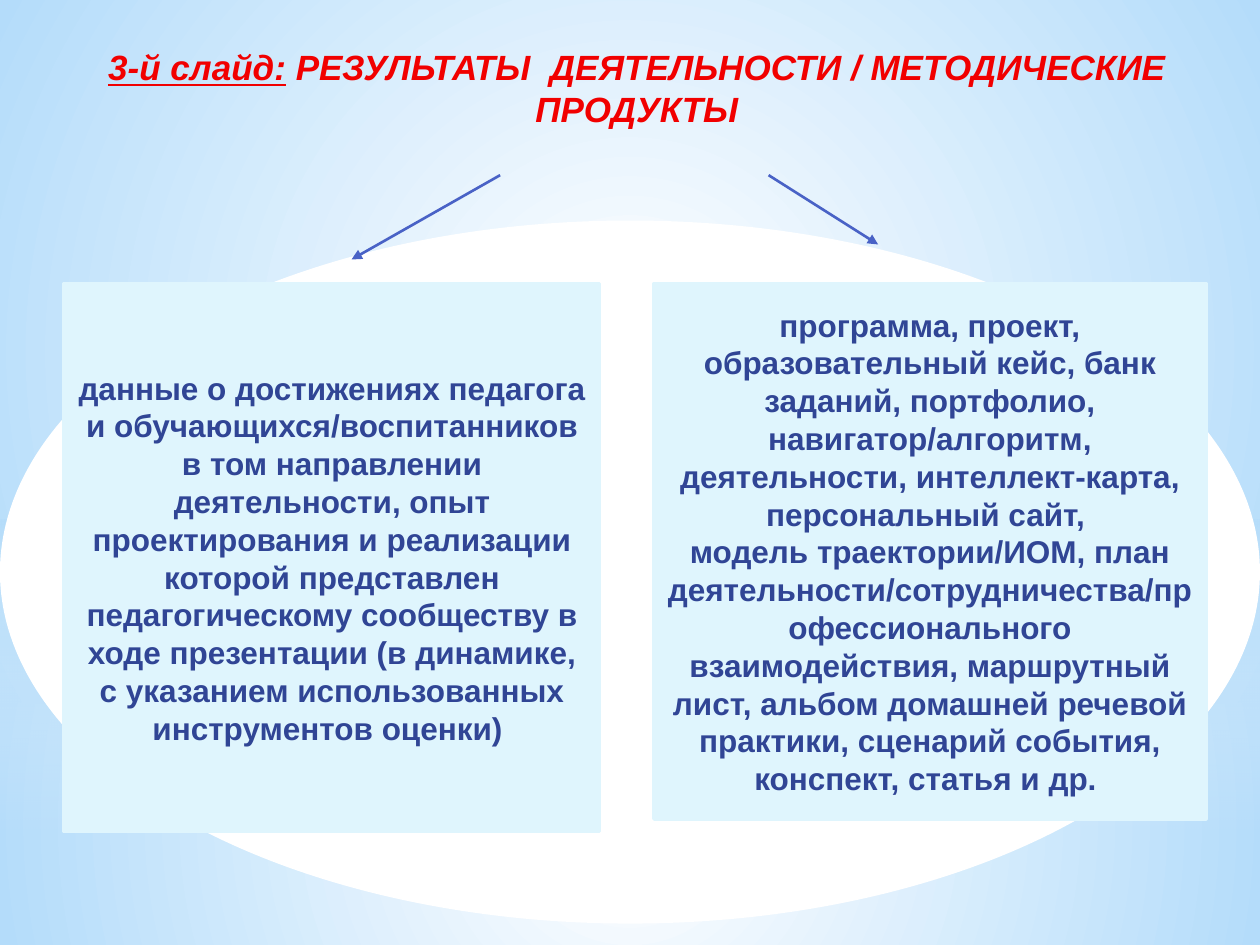
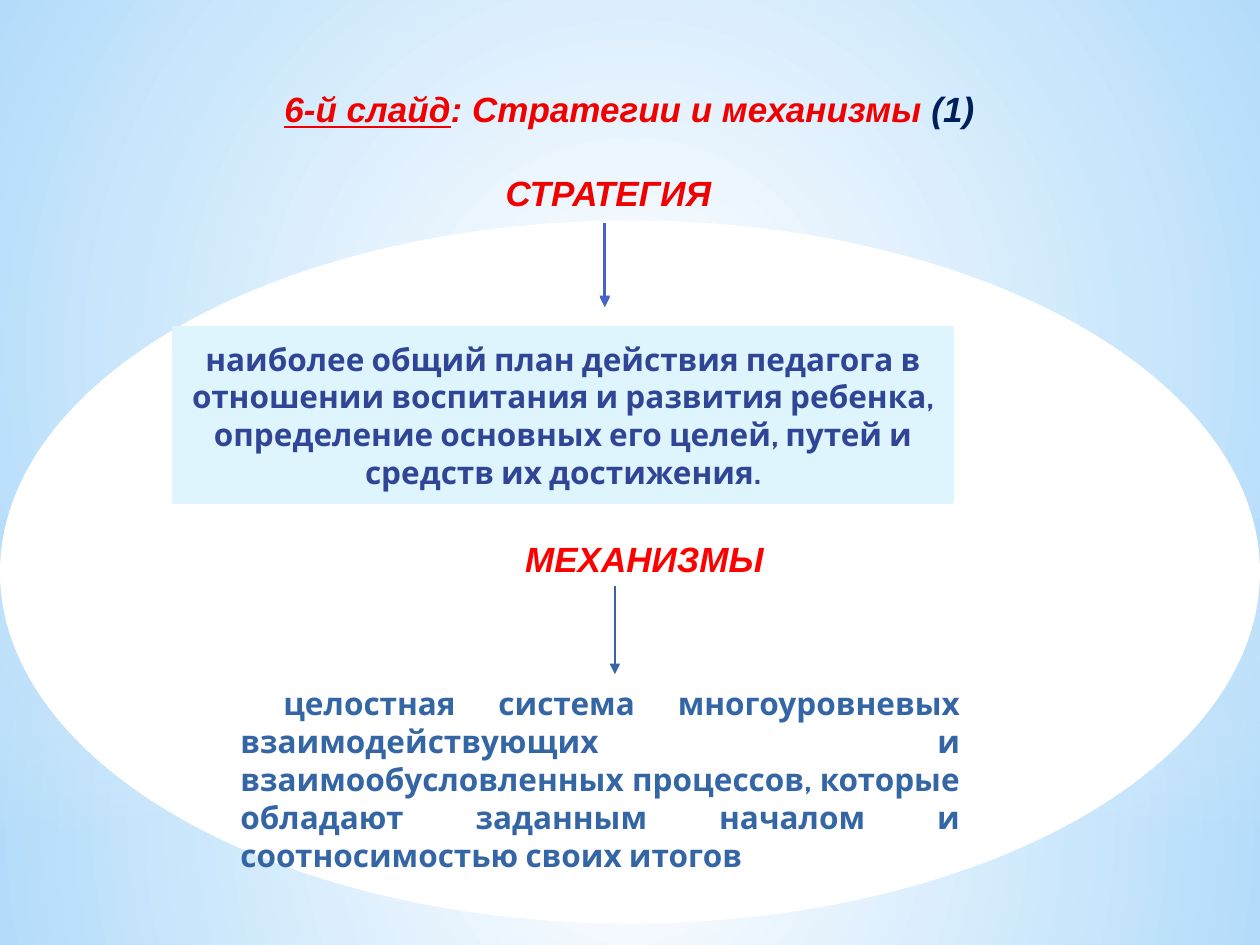
from lxml.etree import SubElement
from pptx import Presentation
from pptx.dml.color import RGBColor as RGB
from pptx.enum.shapes import MSO_CONNECTOR as CONN, MSO_SHAPE as SHAPE
from pptx.enum.text import MSO_ANCHOR as ANCHOR, MSO_AUTO_SIZE as AUTO, PP_ALIGN as ALIGN
from pptx.oxml.ns import qn
from pptx.util import Pt

W, H = 720, 540
COLORS = {
    "sky": "9CD4FF", "haze": "B4DCFA", "white": "FFFFFF", "card": "DFF5FD",
    "title": "F10000", "red": "FF0000", "number": "001E5A", "text": "304595",
    "arrow": "4962C6", "steel": "3465A4",
}
HEADING = {"name": "Arial", "size": 20, "bold": True, "italic": True, "color": "title"}
CARD_TEXT = {"name": "Arial", "size": 18, "bold": True, "color": "text"}
CABIN_TEXT = CARD_TEXT | {"name": "Cabin"}


def rgb(name):
    return RGB.from_string(COLORS[name])


def place(sp, x, y, w, h):
    sp.left, sp.top, sp.width, sp.height = Pt(x), Pt(y), Pt(w), Pt(h)


def write(sp, paragraphs, anchor=ANCHOR.MIDDLE, align=ALIGN.CENTER, before=0, after=0):
    """Fill sp with paragraphs, each a list of (text, format) runs."""
    tf = sp.text_frame
    tf.word_wrap, tf.auto_size, tf.vertical_anchor = True, AUTO.NONE, anchor
    for i, runs in enumerate(paragraphs):
        p = tf.add_paragraph() if i else tf.paragraphs[0]
        p.alignment, p.space_before, p.space_after = align, Pt(before), Pt(after)
        for text, fmt in runs:
            r = p.add_run()
            r.text = text
            for key, value in fmt.items():
                if key == "color":
                    r.font.color.rgb = rgb(value)
                else:
                    setattr(r.font, key, Pt(value) if key == "size" else value)


def add_shape(s, kind, box, fill=None, line=None):
    sp = s.shapes.add_shape(kind, *map(Pt, box))
    sp.shadow.inherit = False
    if fill:
        sp.fill.solid()
        sp.fill.fore_color.rgb = rgb(fill)
    if line:
        sp.line.color.rgb, sp.line.width = rgb(line), Pt(2)
    else:
        sp.line.fill.background()
    return sp


def add_gradient(sp, stops, radial=True):
    """Give sp a two-stop gradient of (colour, opacity in percent)."""
    props = sp.element.spPr
    grad = SubElement(props, qn("a:gradFill"), rotWithShape="1")
    props.insert(2, grad)
    stop_list = SubElement(grad, qn("a:gsLst"))
    for pos, (color, opacity) in zip((0, 100000), stops):
        stop = SubElement(stop_list, qn("a:gs"), pos=str(pos))
        clr = SubElement(stop, qn("a:srgbClr"), val=COLORS[color])
        if opacity < 100:
            SubElement(clr, qn("a:alpha"), val=str(opacity * 1000))
    if radial:
        path = SubElement(grad, qn("a:path"))
        path.set("path", "circle")
        SubElement(path, qn("a:fillToRect"), {side: "50000" for side in "ltrb"})
    else:
        SubElement(grad, qn("a:lin"), ang="5400000", scaled="0")


def add_arrow(s, x1, y1, x2, y2, color="arrow", width=1.5):
    c = s.shapes.add_connector(CONN.STRAIGHT, Pt(x1), Pt(y1), Pt(x2), Pt(y2))
    c.line.color.rgb, c.line.width = rgb(color), Pt(width)
    SubElement(c.line._get_or_add_ln(), qn("a:tailEnd"), type="triangle")
    SubElement(c.element.spPr, qn("a:effectLst"))


def add_textbox(s, box, paragraphs, **options):
    write(s.shapes.add_textbox(*map(Pt, box)), paragraphs, **options)


def add_card(s, box, paragraphs):
    write(add_shape(s, SHAPE.RECTANGLE, box, "card", "card"), paragraphs)


def add_title(s, box, runs):
    place(s.shapes.title, *box)
    write(s.shapes.title, [runs], anchor=ANCHOR.BOTTOM, before=4, after=3)


def move_backdrop_to_master(prs, s, box):
    """Draw the shared sky and ellipse on s, then move them to the master."""
    x, y, w, h = box
    big = 0.744 * h
    lower = add_shape(s, SHAPE.RECTANGLE, (x, y + big, w, h - big))
    upper = add_shape(s, SHAPE.RECTANGLE, (x, y, w, big))
    band = add_shape(s, SHAPE.RECTANGLE, (x, y + 0.55 * h, w, h / 3))
    ellipse = add_shape(s, SHAPE.OVAL, (x, y + 126, w, big), "white")
    for sp in (lower, upper):
        add_gradient(sp, [("white", 100), ("haze", 100)])
    add_gradient(band, [("haze", 60), ("white", 0)], radial=False)

    master = prs.slide_master
    master.background.fill.solid()
    master.background.fill.fore_color.rgb = rgb("sky")
    for i, sp in enumerate((lower, upper, band, ellipse)):
        sp.element.nvSpPr.cNvPr.set("id", str(101 + i))
        master.shapes.element.insert(2 + i, sp.element)


def results_region(s, box):
    x, y, w, h = box
    # Arrows from the title to the cards
    add_arrow(s, x + 249.1, y, x + 164.2, y + 48.2)
    add_arrow(s, x + 402.5, y, x + 465.1, y + 39.6)
    # Cards
    top, right_w = 61.9, 315.4
    add_card(s, (x, y + top, 306, h - top), [[(
        "данные о достижениях педагога и обучающихся/воспитанников в том направлении "
        "деятельности, опыт проектирования и реализации которой представлен "
        "педагогическому сообществу в ходе презентации (в динамике, с указанием "
        "использованных инструментов оценки) ", CARD_TEXT)]])
    add_card(s, (x + w - right_w, y + top, right_w, h - top - 7.2), [
        [("программа, проект, образовательный кейс, банк заданий, портфолио, "
          "навигатор/алгоритм, деятельности, интеллект-карта, персональный сайт, ",
          CARD_TEXT)],
        [("модель траектории/ИОМ, план деятельности/сотрудничества/профессионального "
          "взаимодействия, маршрутный лист, альбом домашней речевой практики, "
          "сценарий события, конспект, статья и др. ", CARD_TEXT)]])


def strategy_region(s, box):
    x, y, w, h = box
    # Heading
    body = s.placeholders[1]
    place(body, *box)
    write(body, [[("СТРАТЕГИЯ", HEADING)]], anchor=ANCHOR.TOP, before=4.8, after=3)
    props = body.text_frame.paragraphs[0]._p.get_or_add_pPr()
    props.set("marL", str(Pt(3.6)))
    props.set("indent", "0")
    SubElement(props, qn("a:buNone"))
    # Definition
    add_card(s, (x + 11.5, y + 92.9, 445, h - 92.9), [[(
        "наиболее общий план действия педагога в отношении воспитания и развития "
        "ребенка, определение основных его целей, путей и средств их достижения.",
        CABIN_TEXT)]])
    # Double arrow
    for top in (y + 33.8, y + 33.1):
        add_arrow(s, x + w / 2 - 0.3, top, x + w / 2 - 0.3, top + 47.5)


def mechanisms_region(s, box):
    x, y, w, h = box
    # Heading
    add_textbox(s, (x, y, w, 64.8), [[(" МЕХАНИЗМЫ ", HEADING | {"color": "red"})]],
                anchor=ANCHOR.BOTTOM, before=2.8, after=3)
    add_arrow(s, x + 320.4, y + 64.8, x + 320.4, y + 115.2, "steel", 0.75)
    # Definition
    add_textbox(s, (x + 99.3, y + 133.9, 425.5, h - 133.9), [[(
        " целостная система многоуровневых взаимодействующих и взаимообусловленных "
        "процессов, которые обладают заданным началом и соотносимостью своих итогов",
        CABIN_TEXT | {"color": "steel"})]], anchor=ANCHOR.BOTTOM, align=ALIGN.JUSTIFY)


def results_slide(prs):
    s = prs.slides.add_slide(prs.slide_layouts[5])
    move_backdrop_to_master(prs, s, (0, 0, W, H))
    add_title(s, (22.3, 20.9, 683.3, 56.9), [
        ("3-й слайд:", HEADING | {"underline": True}),
        (" РЕЗУЛЬТАТЫ  ДЕЯТЕЛЬНОСТИ / МЕТОДИЧЕСКИЕ ПРОДУКТЫ", HEADING)])
    results_region(s, (36.7, 100.1, 652.4, 375.1))


def strategies_slide(prs):
    s = prs.slides.add_slide(prs.slide_layouts[1])
    add_title(s, (25.2, 20.9, 668.9, 56.9), [
        ("6-й слайд", HEADING | {"underline": True}),
        (": Стратегии и механизмы ", HEADING),
        ("(1)", HEADING | {"color": "number"})])
    strategy_region(s, (87.8, 94.3, 516.2, 193))
    mechanisms_region(s, (31, 270, 674.6, 232.6))


def main():
    prs = Presentation()
    prs.slide_width, prs.slide_height = Pt(W), Pt(H)
    results_slide(prs)
    strategies_slide(prs)
    prs.save("out.pptx")


if __name__ == "__main__":
    main()
